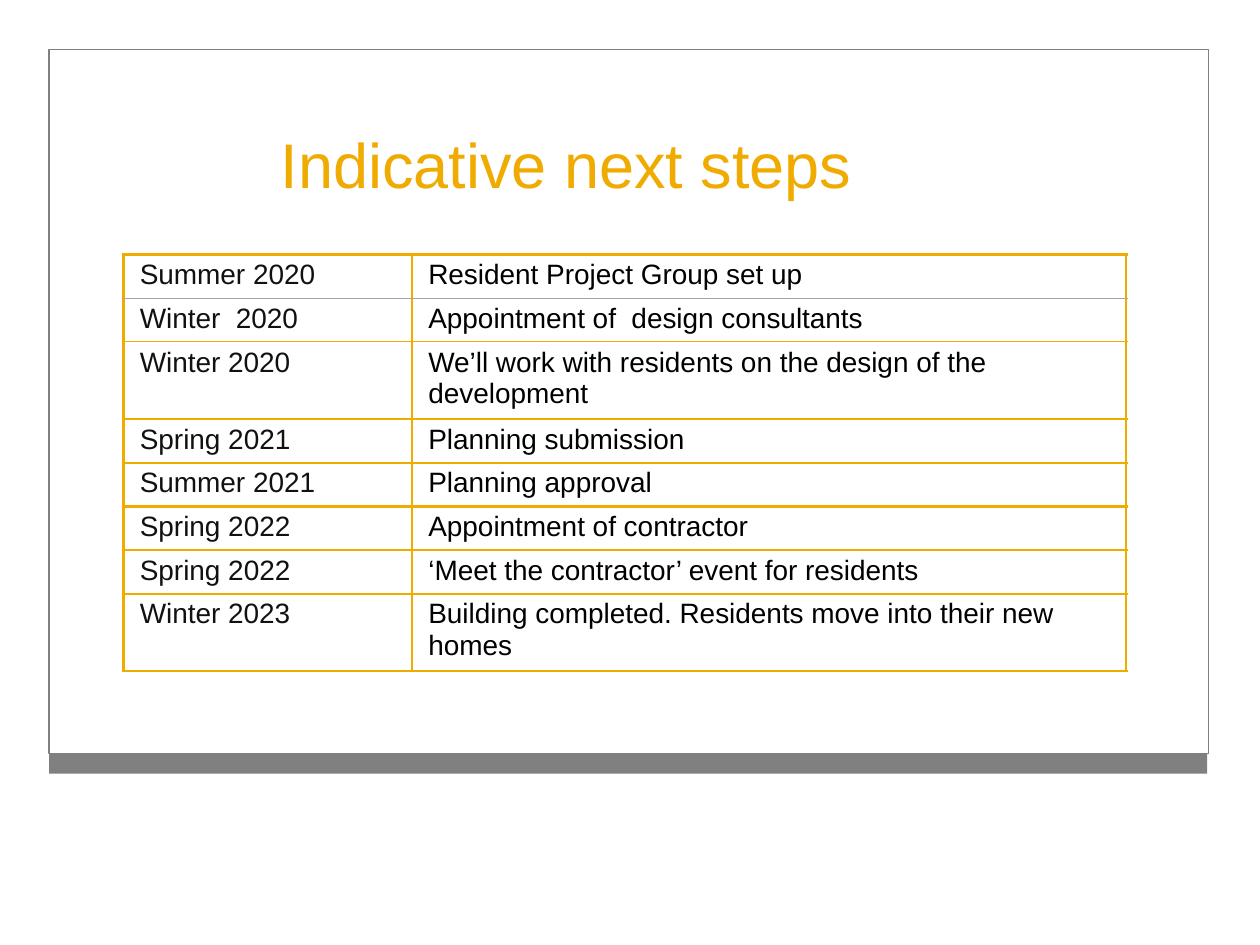
from dataclasses import dataclass

from lxml import etree
from pptx import Presentation
from pptx import util as u
from pptx.dml.color import RGBColor
from pptx.enum import shapes, text
from pptx.oxml import ns


@dataclass(frozen=True)
class Theme:
    font: str = "Arial"
    accent: str = "F0AB00"
    grey: str = "808080"
    rule: str = "A6A6A6"
    date: str = "111111"
    body: str = "000000"
    title_size: int = 36
    body_size: int = 16


STEPS = [
    ("Summer 2020", "Resident Project Group set up"),
    ("Winter  2020", "Appointment of  design consultants"),
    ("Winter 2020", "We’ll work with residents on the design of the development"),
    ("Spring 2021", "Planning submission"),
    ("Summer 2021", "Planning approval"),
    ("Spring 2022", "Appointment of contractor"),
    ("Spring 2022", "‘Meet the contractor’ event for residents"),
    ("Winter 2023", "Building completed. Residents move into their new homes"),
]
COLUMN_WIDTHS = (2.29, 5.67)
ROW_HEIGHT, TALL_ROW_HEIGHT = 0.34, 0.61
CHARACTERS_PER_LINE = 50


def write_text(frame, wording, *, font, size, color, align=text.PP_ALIGN.LEFT,
               line_spacing=None, margins=(0, 0)):
    """Fill a text frame or cell text; margins are horizontal and vertical inches."""
    paragraph = frame.paragraphs[0]
    paragraph.text = wording
    paragraph.alignment = align
    if line_spacing:
        paragraph.line_spacing = u.Pt(line_spacing)
    run_font = paragraph.runs[0].font
    run_font.name, run_font.size = font, u.Pt(size)
    run_font.color.rgb = RGBColor.from_string(color)
    frame.margin_left = frame.margin_right = u.Inches(margins[0])
    frame.margin_top = frame.margin_bottom = u.Inches(margins[1])


def set_borders(cell, borders):
    """Borders map a side (L, R, T, B) to a colour and a width in points."""
    properties = cell._tc.get_or_add_tcPr()
    for position, side in enumerate("LRTB"):
        color, width = borders[side]
        line = etree.Element(ns.qn(f"a:ln{side}"), w=str(u.Pt(width)))
        fill = etree.SubElement(line, ns.qn("a:solidFill"))
        etree.SubElement(fill, ns.qn("a:srgbClr"), val=color)
        properties.insert(position, line)


class SlideBuilder:
    def __init__(self, slide, theme):
        self.slide = slide
        self.theme = theme

    def rectangle(self, left, top, width, height, fill=None, line=None):
        shape = self.slide.shapes.add_shape(
            shapes.MSO_SHAPE.RECTANGLE,
            *(u.Inches(length) for length in (left, top, width, height)))
        shape.shadow.inherit = False
        if fill:
            shape.fill.solid()
            shape.fill.fore_color.rgb = RGBColor.from_string(fill)
        else:
            shape.fill.background()
        if line:
            shape.line.color.rgb = RGBColor.from_string(line)
            shape.line.width = u.Pt(0.75)
        else:
            shape.line.fill.background()

    def title(self, wording, left, top, width, height):
        title = self.slide.shapes.title
        title.left, title.top = u.Inches(left), u.Inches(top)
        title.width, title.height = u.Inches(width), u.Inches(height)
        frame = title.text_frame
        write_text(frame, wording, font=self.theme.font, size=self.theme.title_size,
                   color=self.theme.accent, align=text.PP_ALIGN.CENTER, line_spacing=66)
        frame.word_wrap = True
        frame.vertical_anchor = text.MSO_ANCHOR.TOP
        frame.auto_size = text.MSO_AUTO_SIZE.SHAPE_TO_FIT_TEXT

    def timeline_table(self, steps, left, top):
        heights = [TALL_ROW_HEIGHT if len(step) > CHARACTERS_PER_LINE else ROW_HEIGHT
                   for _, step in steps]
        table = self.slide.shapes.add_table(
            len(steps), len(COLUMN_WIDTHS), u.Inches(left), u.Inches(top),
            u.Inches(sum(COLUMN_WIDTHS)), u.Inches(sum(heights))).table
        table.first_row = table.horz_banding = False
        for column, width in zip(table.columns, COLUMN_WIDTHS):
            column.width = u.Inches(width)

        # Rules below the first two rows are thinner, the first one grey
        strong, thin = (self.theme.accent, 1.5), (self.theme.accent, 0.75)
        rules = [strong, (self.theme.rule, 0.75), thin] + [strong] * (len(steps) - 2)
        for row, (entries, height) in enumerate(zip(steps, heights)):
            table.rows[row].height = u.Inches(height)
            for column, wording in enumerate(entries):
                cell = table.cell(row, column)
                cell.fill.background()
                write_text(cell.text_frame, wording, font=self.theme.font,
                           size=self.theme.body_size,
                           color=(self.theme.date, self.theme.body)[column])
                cell.margin_left = cell.margin_right = u.Inches(0.13)
                cell.margin_top = cell.margin_bottom = u.Inches(0.04)
                set_borders(cell, {"L": (strong, thin)[column],
                                   "R": (thin, strong)[column],
                                   "T": rules[row], "B": rules[row + 1]})


def main():
    presentation = Presentation()
    presentation.slide_width, presentation.slide_height = u.Inches(10), u.Inches(7.5)
    theme = Theme()
    title_only = presentation.slide_layouts[5]
    builder = SlideBuilder(presentation.slides.add_slide(title_only), theme)

    # Frame with a footer bar
    builder.rectangle(0.39, 5.98, 9.19, 0.16, fill=theme.grey)
    builder.rectangle(0.39, 0.39, 9.2, 5.59, line=theme.grey)

    # Heading and programme
    builder.title("Indicative next steps", 0.91, 0.68, 7.17, 0.81)
    builder.timeline_table(STEPS, 0.98, 2.02)

    presentation.save("out.pptx")


if __name__ == "__main__":
    main()
